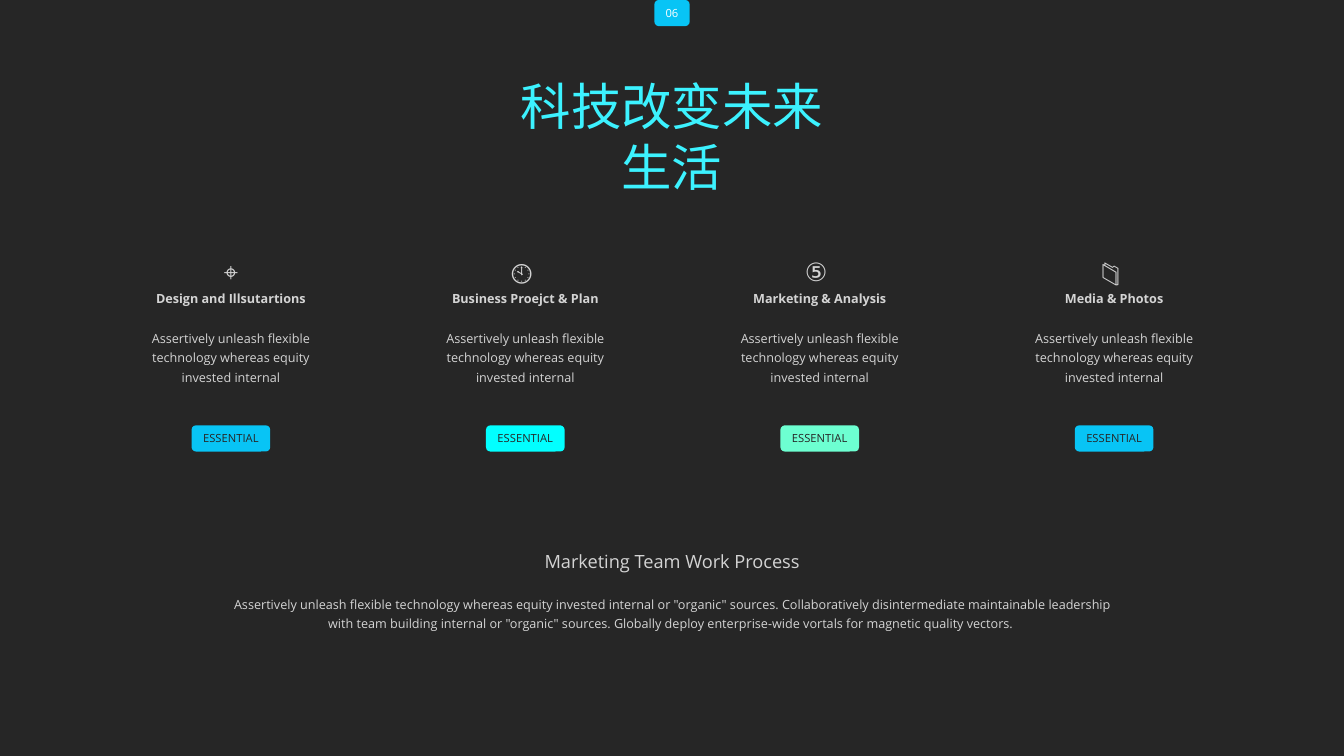
from pptx import Presentation
from pptx.dml.color import RGBColor
from pptx.enum.shapes import MSO_SHAPE
from pptx.enum.text import MSO_ANCHOR, PP_ALIGN
from pptx.util import Inches, Pt

DARK = RGBColor(0x26, 0x26, 0x26)
GREY = RGBColor(0xD4, 0xD4, 0xD4)
WHITE = RGBColor(0xFF, 0xFF, 0xFF)
BLUE = RGBColor(0x08, 0xC4, 0xF5)
CYAN = RGBColor(0x02, 0xFF, 0xFF)
MINT = RGBColor(0x6D, 0xFF, 0xD1)
AQUA = RGBColor(0x3C, 0xF2, 0xFF)

WIDE, HIGH = 13.33, 7.5
LEFT, STEP = 1.36, 2.92  # first column and column pitch
COL, TAG = 1.86, 0.78    # widths of a column and its tag

# Text formats: font values, then paragraph values
ICON = ({"name": "Arial", "size": Pt(18)}, {"line_spacing": 1.3})
HEAD = ({"size": Pt(9), "bold": True}, {"line_spacing": 1.3})
BODY = ({"size": Pt(9)}, {"line_spacing": 1.3, "space_before": Pt(14.5)})
LEAD = ({"size": Pt(13)}, {"line_spacing": 1.3})
NAME = ({"name": "Noto Sans CJK SC", "size": Pt(36)}, {})
MARK = ({"size": Pt(8)}, {})


def write(frame, parts, tint):
    for i, (text, (font, para)) in enumerate(parts):
        line = frame.add_paragraph() if i else frame.paragraphs[0]
        line.alignment = PP_ALIGN.CENTER
        for key, val in para.items():
            setattr(line, key, val)
        run = line.add_run()
        run.text = text
        run.font.color.rgb = tint
        for key, val in {"name": "Open Sans", **font}.items():
            setattr(run.font, key, val)


def place(box, parts, tint, fill=None):
    area = [Inches(n) for n in box]
    if fill is None:
        shape = slide.shapes.add_textbox(*area)
    else:
        shape = slide.shapes.add_shape(MSO_SHAPE.ROUNDED_RECTANGLE, *area)
        shape.shadow.inherit = False
        shape.fill.solid()
        shape.fill.fore_color.rgb = fill
        shape.line.fill.background()
    frame = shape.text_frame
    frame.word_wrap = fill is None
    frame.vertical_anchor = MSO_ANCHOR.TOP if fill is None else MSO_ANCHOR.MIDDLE
    write(frame, parts, tint)


deck = Presentation()
deck.slide_width, deck.slide_height = Inches(WIDE), Inches(HIGH)
slide = deck.slides.add_slide(deck.slide_layouts[6])
slide.background.fill.solid()
slide.background.fill.fore_color.rgb = DARK

# Four columns, each with a tag centred below
blurb = "Assertively unleash flexible technology whereas equity invested internal"
cols = [
    ("⌖", "Design and Illsutartions", BLUE),
    ("🕙 ", "Business Proejct & Plan", CYAN),
    ("⑤ ", "Marketing & Analysis", MINT),
    ("📁 ", "Media & Photos", BLUE),
]
for i, (icon, head, fill) in enumerate(cols):
    x = LEFT + i * STEP
    place((x, 2.4, COL, 1.48),
          [(icon, ICON), (head, HEAD), (blurb, BODY)], GREY)
    place((x + (COL - TAG) / 2, 4.22, TAG, 0.26),
          [("ESSENTIAL", MARK)], DARK, fill)

# Page number
place(((WIDE - 0.35) / 2, 0, 0.35, 0.26), [("06", MARK)], WHITE, BLUE)

# Closing text
place(((WIDE - 8.96) / 2, 5.34, 8.96, 0.98), [
    ("Marketing Team Work Process", LEAD),
    (blurb + ' or "organic" sources. Collaboratively disintermediate '
     'maintainable leadership with team building internal or "organic" sources. '
     'Globally deploy enterprise-wide vortals for magnetic quality vectors. ', BODY),
], GREY)

# Title
place(((WIDE - 3.23) / 2, 0.7, 3.23, 0.71), [("科技改变未来生活", NAME)], AQUA)

deck.save("out.pptx")
